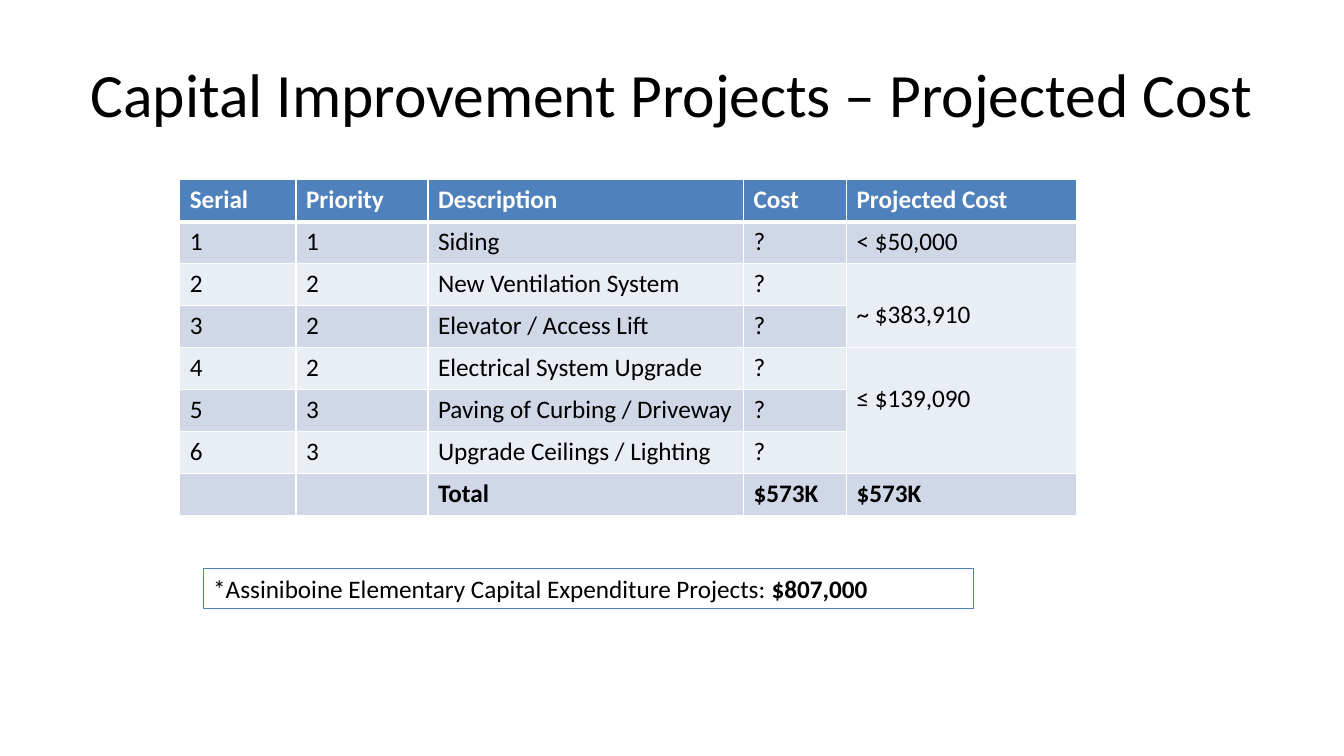
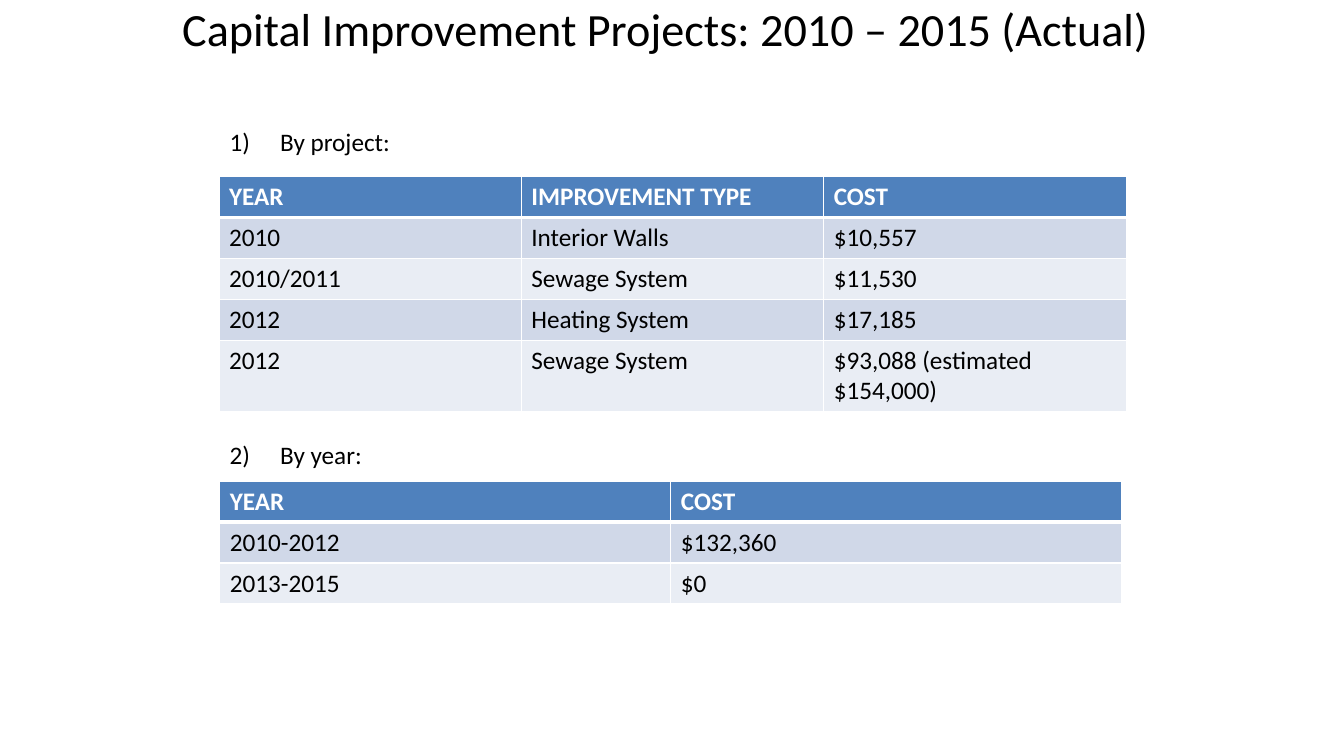
from dataclasses import dataclass

from lxml import etree
from pptx import Presentation
from pptx.dml.color import RGBColor
from pptx.enum.shapes import MSO_SHAPE as SHAPE
from pptx.enum.text import MSO_ANCHOR as ANCHOR, PP_ALIGN as ALIGN
from pptx.oxml.ns import qn
from pptx.util import Pt


@dataclass(frozen=True)
class Theme:
    font: str = "Calibri"
    ink: str = "000000"
    paper: str = "FFFFFF"
    accent: str = "4F81BD"
    bands: tuple = ("D0D8E8", "E9EDF4")
    title: float = 44
    subtitle: float = 33
    body: float = 18
    rule: float = 1
    header_rule: float = 3
    outline: float = 0.75
    inset: float = 3.6
    line_height: float = 22


T = Theme()
SLIDE_SIZE = (960, 540)

PROJECTED = {
    "at": (128.4, 128.4),
    "cols": (83, 94.3, 225.4, 73.6, 164.4),
    "heights": (30,) * 8,
    "rows": [
        ("Serial", "Priority", "Description", "Cost", "Projected Cost"),
        ("1", "1", "Siding", "?", "< $50,000"),
        ("2", "2", "New Ventilation System", "?", "~ $383,910"),
        ("3", "2", "Elevator / Access Lift", "?", ""),
        ("4", "2", "Electrical System Upgrade", "?", "≤ $139,090"),
        ("5", "3", "Paving of Curbing / Driveway", "?", ""),
        ("6", "3", "Upgrade Ceilings / Lighting", "?", ""),
        ("", "", "Total", "$573K", "$573K"),
    ],
    "bold_rows": (0, 7),
    "merges": [(2, 3, 4), (4, 6, 4)],
}
BY_PROJECT = {
    "at": (156.4, 126.2),
    "cols": (216,) * 3,
    "heights": (29.2,) * 4 + (51,),
    "rows": [
        ("YEAR", "IMPROVEMENT TYPE", "COST"),
        ("2010", "Interior Walls", "$10,557"),
        ("2010/2011", "Sewage System", "$11,530"),
        ("2012", "Heating System", "$17,185"),
        ("2012", "Sewage System", "$93,088 (estimated $154,000)"),
    ],
}
BY_YEAR = {
    "at": (157, 343.8),
    "cols": (322.2,) * 2,
    "heights": (29.2,) * 3,
    "rows": [
        ("YEAR", "COST"),
        ("2010-2012", "$132,360"),
        ("2013-2015", "$0"),
    ],
}
NOTE = [("*Assiniboine Elementary Capital Expenditure Projects: ", False), ("$807,000", True)]
HEADINGS = [("1)\tBy project:", 86.6), ("2)\tBy year:", 309.9)]


def style(p, size=T.body, color=T.ink, bold=False):
    p.font.name = T.font
    p.font.size = Pt(size)
    p.font.bold = bold
    p.font.color.rgb = RGBColor.from_string(color)


def add_text(slide, box, text, size=T.body, align=ALIGN.LEFT, anchor=ANCHOR.TOP, inset=T.inset):
    tf = slide.shapes.add_textbox(*map(Pt, box)).text_frame
    tf.word_wrap = True
    tf.vertical_anchor = anchor
    tf.margin_top = tf.margin_bottom = Pt(inset)
    p = tf.paragraphs[0]
    p.text = text
    p.alignment = align
    style(p, size)


def add_title(slide, box, text, size, inset=T.inset):
    add_text(slide, box, text, size, ALIGN.CENTER, ANCHOR.MIDDLE, inset)


def set_borders(cell, top, bottom):
    tc_pr = cell._tc.get_or_add_tcPr()
    widths = {"lnL": T.rule, "lnR": T.rule, "lnT": top, "lnB": bottom}
    for i, (side, width) in enumerate(widths.items()):
        ln = etree.Element(qn(f"a:{side}"), w=str(Pt(width)))
        fill = etree.SubElement(ln, qn("a:solidFill"))
        etree.SubElement(fill, qn("a:srgbClr"), val=T.paper)
        tc_pr.insert(i, ln)


def add_table(slide, data):
    rows, cols, heights = data["rows"], data["cols"], data["heights"]
    size = (sum(cols), sum(heights))
    table = slide.shapes.add_table(len(rows), len(cols), *map(Pt, data["at"] + size)).table
    table.horz_banding = False
    for column, width in zip(table.columns, cols):
        column.width = Pt(width)
    for r, (values, height) in enumerate(zip(rows, heights)):
        table.rows[r].height = Pt(height)
        header = r == 0
        for c, value in enumerate(values):
            cell = table.cell(r, c)
            cell.fill.solid()
            cell.fill.fore_color.rgb = RGBColor.from_string(
                T.accent if header else T.bands[(r - 1) % 2])
            set_borders(cell, T.header_rule if r == 1 else T.rule,
                        T.header_rule if header else T.rule)
            p = cell.text_frame.paragraphs[0]
            p.text = value
            style(p, color=T.paper if header else T.ink, bold=r in data.get("bold_rows", (0,)))
    for first, last, c in data.get("merges", []):
        cell = table.cell(first, c)
        cell.merge(table.cell(last, c))
        cell.margin_top = Pt(T.inset + T.line_height)


def add_note(slide, box, runs):
    s = slide.shapes.add_shape(SHAPE.RECTANGLE, *map(Pt, box))
    s.shadow.inherit = False
    s.fill.background()
    s.line.color.rgb = RGBColor.from_string(T.accent)
    s.line.width = Pt(T.outline)
    tf = s.text_frame
    tf.word_wrap = True
    tf.vertical_anchor = ANCHOR.TOP
    p = tf.paragraphs[0]
    p.alignment = ALIGN.LEFT
    style(p)
    for text, bold in runs:
        r = p.add_run()
        r.text = text
        r.font.bold = bold
        r.font.color.rgb = RGBColor.from_string(T.ink)


def build_projected(slide):
    add_title(slide, (48, 21.6, 864, 90), "Capital Improvement Projects – Projected Cost", T.title)
    add_table(slide, PROJECTED)
    add_note(slide, (145.2, 406, 550, 29), NOTE)


def build_actual(slide):
    add_title(slide, (120, 0, 711, 40), "Capital Improvement Projects: 2010 – 2015 (Actual)",
              T.subtitle, inset=0)
    for text, top in HEADINGS:
        add_text(slide, (157, top, 227, 29), text)
    for data in (BY_PROJECT, BY_YEAR):
        add_table(slide, data)


def main():
    prs = Presentation()
    prs.slide_width, prs.slide_height = map(Pt, SLIDE_SIZE)
    for build in (build_projected, build_actual):
        build(prs.slides.add_slide(prs.slide_layouts[6]))
    prs.save("out.pptx")


if __name__ == "__main__":
    main()
